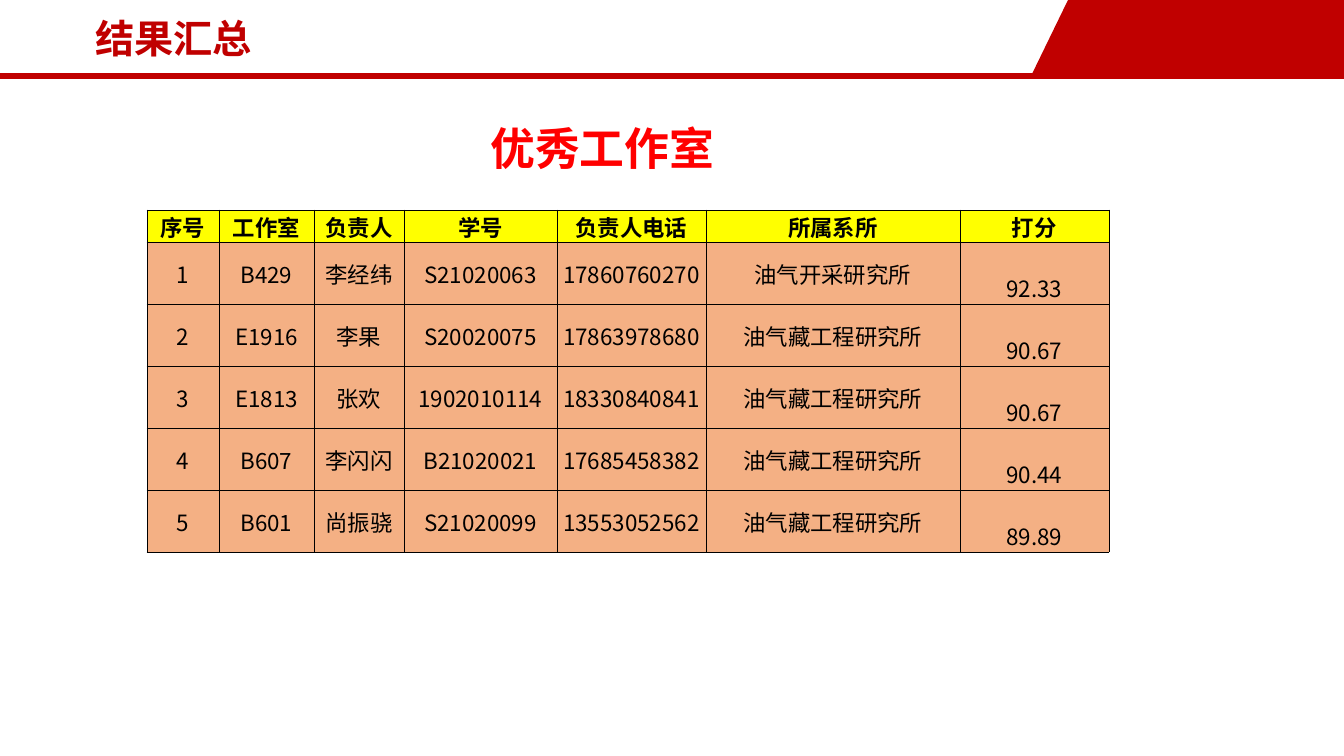
"""Build the slide that lists the outstanding studios with their scores."""
import lxml.etree
import pptx
import pptx.dml.color
import pptx.enum.shapes
import pptx.enum.text
import pptx.oxml.ns
import pptx.util

RGBColor = pptx.dml.color.RGBColor
PP_ALIGN = pptx.enum.text.PP_ALIGN
MSO_ANCHOR = pptx.enum.text.MSO_ANCHOR
qn = pptx.oxml.ns.qn

TITLE = "结果汇总"
HEADING = "优秀工作室"
HEADER = ("序号", "工作室", "负责人", "学号", "负责人电话", "所属系所", "打分")
STUDIOS = [
    ("1", "B429", "李经纬", "S21020063", "17860760270", "油气开采研究所", "92.33"),
    ("2", "E1916", "李果", "S20020075", "17863978680", "油气藏工程研究所", "90.67"),
    ("3", "E1813", "张欢", "1902010114", "18330840841", "油气藏工程研究所", "90.67"),
    ("4", "B607", "李闪闪", "B21020021", "17685458382", "油气藏工程研究所", "90.44"),
    ("5", "B601", "尚振骁", "S21020099", "13553052562", "油气藏工程研究所", "89.89"),
]

FONT = "Noto Sans CJK SC"
DARK_RED = RGBColor(0xC0, 0x00, 0x00)
RED = RGBColor(0xFF, 0x00, 0x00)
BLACK = RGBColor(0x00, 0x00, 0x00)
YELLOW = RGBColor(0xFF, 0xFF, 0x00)
ORANGE = RGBColor(0xF4, 0xB0, 0x84)

WIDTH, HEIGHT = 1344, 756
RULE_Y = 76
CORNER = [(1068, 0), (WIDTH, 0), (WIDTH, 75), (1031, RULE_Y)]
TITLE_BOX = (85, 9, 178, 57)
HEADING_BOX = (321, 116, 563, 65)
TABLE_LEFT, TABLE_TOP = 147, 210
COLUMN_WIDTHS = (72, 95, 90, 153, 149, 254, 149)
ROW_HEIGHTS = [32] + [62] * len(STUDIOS)


def px(length):
    """Turn pixels into EMU."""
    return pptx.util.Emu(round(length * 914400 / 100.8))


def format_paragraph(paragraph, size, color, bold, alignment):
    """Set the font and alignment of a paragraph."""
    paragraph.alignment = alignment
    font = paragraph.font
    font.size = pptx.util.Pt(size)
    font.bold = bold
    font.color.rgb = color
    font.name = FONT
    latin = paragraph._p.pPr.find(qn("a:defRPr")).find(qn("a:latin"))
    east_asian = lxml.etree.Element(qn("a:ea"), typeface=FONT)
    latin.addnext(east_asian)


def add_borders(cell):
    """Draw thin black lines on all four sides of a cell."""
    properties = cell._tc.get_or_add_tcPr()
    for index, side in enumerate(("a:lnL", "a:lnR", "a:lnT", "a:lnB")):
        line = lxml.etree.Element(qn(side), w=str(pptx.util.Pt(0.5)))
        fill = lxml.etree.SubElement(line, qn("a:solidFill"))
        lxml.etree.SubElement(fill, qn("a:srgbClr"), val=str(BLACK))
        properties.insert(index, line)


def add_banner(slide):
    """Add the rule and the slanted corner at the top."""
    rule = slide.shapes.add_connector(
        pptx.enum.shapes.MSO_CONNECTOR.STRAIGHT, 0, px(RULE_Y), px(WIDTH), px(RULE_Y))
    rule.line.color.rgb = DARK_RED
    rule.line.width = pptx.util.Pt(4.5)
    lxml.etree.SubElement(rule._element.spPr, qn("a:effectLst"))

    points = [(px(x), px(y)) for x, y in CORNER]
    builder = slide.shapes.build_freeform(*points[0])
    builder.add_line_segments(points[1:], close=True)
    corner = builder.convert_to_shape()
    corner.shadow.inherit = False
    corner.fill.solid()
    corner.fill.fore_color.rgb = DARK_RED
    corner.line.fill.background()


def add_titles(slide):
    """Fill the title placeholder and add the table heading."""
    title = slide.shapes.title
    title.left, title.top, title.width, title.height = map(px, TITLE_BOX)
    title.text_frame.text = TITLE
    title.text_frame.word_wrap = False
    title.text_frame.vertical_anchor = MSO_ANCHOR.TOP
    title_paragraph = title.text_frame.paragraphs[0]
    title_paragraph.line_spacing = 1.0
    format_paragraph(title_paragraph, 28, DARK_RED, True, PP_ALIGN.LEFT)

    heading = slide.shapes.add_textbox(*map(px, HEADING_BOX))
    heading.text_frame.text = HEADING
    heading.text_frame.word_wrap = True
    format_paragraph(heading.text_frame.paragraphs[0], 32, RED, True, PP_ALIGN.CENTER)


def add_studio_table(slide):
    """Add the table of studios."""
    rows = [HEADER] + STUDIOS
    table = slide.shapes.add_table(
        len(rows), len(HEADER), px(TABLE_LEFT), px(TABLE_TOP),
        px(sum(COLUMN_WIDTHS)), px(sum(ROW_HEIGHTS))).table
    table.horz_banding = False
    for column, width in zip(table.columns, COLUMN_WIDTHS):
        column.width = px(width)
    for row_index, texts in enumerate(rows):
        is_header = row_index == 0
        table.rows[row_index].height = px(ROW_HEIGHTS[row_index])
        for column_index, text in enumerate(texts):
            cell = table.cell(row_index, column_index)
            cell.text = text
            cell.margin_left = cell.margin_top = cell.margin_right = px(1)
            cell.margin_bottom = 0
            is_score = column_index == len(HEADER) - 1
            cell.vertical_anchor = MSO_ANCHOR.BOTTOM if is_score else MSO_ANCHOR.MIDDLE
            cell.fill.solid()
            cell.fill.fore_color.rgb = YELLOW if is_header else ORANGE
            add_borders(cell)
            format_paragraph(cell.text_frame.paragraphs[0], 16, BLACK, is_header, PP_ALIGN.CENTER)


def main():
    """Create the presentation and save it."""
    presentation = pptx.Presentation()
    presentation.slide_width, presentation.slide_height = px(WIDTH), px(HEIGHT)
    slide = presentation.slides.add_slide(presentation.slide_layouts[5])
    add_banner(slide)
    add_titles(slide)
    add_studio_table(slide)
    presentation.save("out.pptx")


if __name__ == "__main__":
    main()
